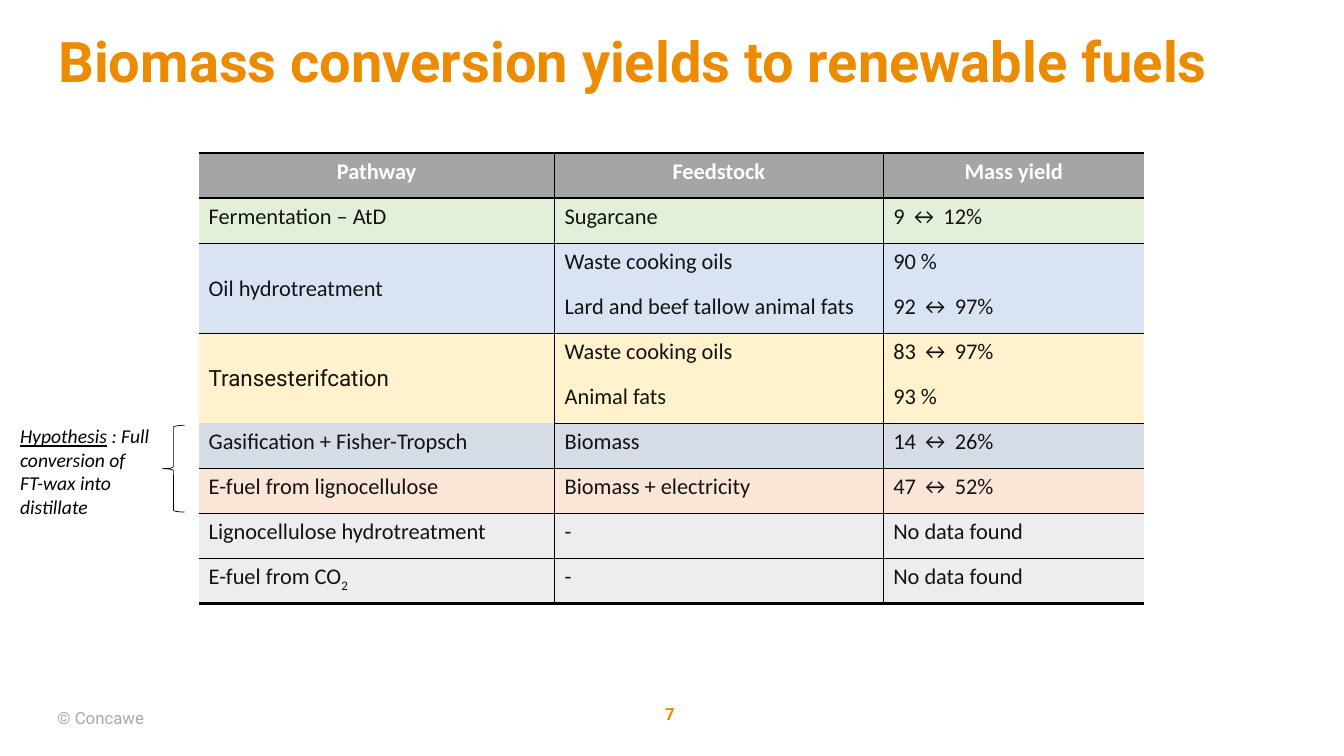
from lxml import etree
from pptx import Presentation
from pptx.dml.color import RGBColor
from pptx.enum.shapes import MSO_SHAPE as SHAPE
from pptx.enum.text import MSO_ANCHOR as ANCHOR, PP_ALIGN as ALIGN
from pptx.oxml.ns import qn
from pptx.util import Inches, Pt

TITLE = "Biomass conversion yields to renewable fuels"
COPYRIGHT = "© Concawe"
PAGE = "7"
HYPOTHESIS = ["Hypothesis", " : Full conversion of FT-wax into distillate"]
ORANGE, BLACK, INK = "ED8B00", "000000", "141313"

HEADER = ("Pathway", "Feedstock", "Mass yield")
# pathway, fill, (feedstock, mass yield) rows
PATHWAYS = [
    ("Fermentation – AtD", "E2F0D9", [("Sugarcane", "9 ↔ 12%")]),
    ("Oil hydrotreatment", "DAE3F3", [("Waste cooking oils", "90 %"),
                                      ("Lard and beef tallow animal fats", "92 ↔ 97%")]),
    ("Transesterifcation", "FFF2CC", [("Waste cooking oils", "83 ↔ 97%"),
                                      ("Animal fats", "93 %")]),
    ("Gasification + Fisher-Tropsch", "D6DCE5", [("Biomass", "14 ↔ 26%")]),
    ("E-fuel from lignocellulose", "FBE5D6", [("Biomass + electricity", "47 ↔ 52%")]),
    ("Lignocellulose hydrotreatment", "EDEDED", [("-", "No data found")]),
    ("E-fuel from CO", "EDEDED", [("-", "No data found")]),
]
COL_WIDTHS = (3.53, 3.26, 2.59)
UNRULED = ("Transesterifcation", "Gasification + Fisher-Tropsch")


def rgb(value):
    return RGBColor.from_string(value)


def style(font, size, color, name="Calibri", bold=False):
    font.size, font.name, font.bold = Pt(size), name, bold
    font.color.rgb = rgb(color)


def add_text(s, box, text, size, color, name, bold=False, anchor=ANCHOR.MIDDLE):
    tf = s.shapes.add_textbox(*map(Inches, box)).text_frame
    tf.word_wrap = True
    tf.vertical_anchor = anchor
    tf.margin_left = tf.margin_top = 0
    tf.margin_bottom = 0 if anchor == ANCHOR.MIDDLE else Inches(0.05)
    tf.text = text
    style(tf.paragraphs[0].runs[0].font, size, color, name, bold)
    return tf


def set_borders(cell, left, right, top, bottom):
    """Draw each side at its width in points; 0 means no line."""
    tcPr = cell._tc.get_or_add_tcPr()
    for side, width in zip("LRTB", (left, right, top, bottom)):
        ln = etree.SubElement(tcPr, qn(f"a:ln{side}"), w=str(Pt(width)))
        if width:
            fill = etree.SubElement(ln, qn("a:solidFill"))
            etree.SubElement(fill, qn("a:srgbClr"), val=BLACK)
        else:
            etree.SubElement(ln, qn("a:noFill"))


def fill_cell(table, row, col, text, fill, top, bottom, header=False):
    cell = table.cell(row, col)
    set_borders(cell, int(col > 0), int(col < 2), top, bottom)
    cell.fill.solid()
    cell.fill.fore_color.rgb = rgb(fill)
    cell.text = text
    p = cell.text_frame.paragraphs[0]
    p.alignment = ALIGN.CENTER if header else ALIGN.LEFT
    style(p.font, 16, INK)
    for r in p.runs:
        style(r.font, 16, "FFFFFF" if header else INK, bold=header)
    return cell


def add_yield_table(s):
    n_rows = 1 + sum(len(rows) for _, _, rows in PATHWAYS)
    table = s.shapes.add_table(n_rows, 3, Inches(1.97), Inches(1.52),
                               Inches(sum(COL_WIDTHS)), Inches(4.47)).table
    table.first_row = table.horz_banding = False
    for column, width in zip(table.columns, COL_WIDTHS):
        column.width = Inches(width)
    for col, text in enumerate(HEADER):
        fill_cell(table, 0, col, text, "A5A5A5", 2, 2, header=True)

    row = 1
    for pathway, fill, feedstocks in PATHWAYS:
        first, last = row, row + len(feedstocks) - 1
        for feedstock, mass_yield in feedstocks:
            top = 2 if row == 1 else int(row == first)
            bottom = 2 if row == n_rows - 1 else int(row == last)
            texts = (pathway if row == first else "", feedstock, mass_yield)
            for col, text in enumerate(texts):
                # the first column has no rule between the UNRULED pathways
                open_top = col == 0 and pathway == UNRULED[1]
                open_bottom = col == 0 and pathway == UNRULED[0]
                fill_cell(table, row, col, text, fill,
                          0 if open_top else top, 0 if open_bottom else bottom)
            row += 1
        if last > first:
            cell = table.cell(first, 0)
            cell.merge(table.cell(last, 0))
            cell.vertical_anchor = ANCHOR.MIDDLE
            if pathway == "Transesterifcation":
                cell.text_frame.paragraphs[0].runs[0].font.name = "Roboto"

    r = table.cell(n_rows - 1, 0).text_frame.paragraphs[0].add_run()
    r.text = "2"
    style(r.font, 16, INK)
    r.font._element.set("baseline", "-25000")


def add_hypothesis(s):
    tf = s.shapes.add_textbox(Inches(0.1), Inches(4.16), Inches(1.51), Inches(1.04)).text_frame
    tf.word_wrap = True
    for text in HYPOTHESIS:
        r = tf.paragraphs[0].add_run()
        r.text = text
        style(r.font, 14, BLACK)
        r.font.italic = True
        r.font.underline = text == HYPOTHESIS[0]
    brace = s.shapes.add_shape(SHAPE.LEFT_BRACE, Inches(1.61), Inches(4.22),
                               Inches(0.22), Inches(0.86))
    brace.shadow.inherit = False
    brace.fill.background()
    brace.line.color.rgb = rgb(BLACK)
    brace.line.width = Pt(0.5)


def main():
    prs = Presentation()
    prs.slide_width, prs.slide_height = Inches(13.33), Inches(7.5)
    s = prs.slides.add_slide(prs.slide_layouts[6])
    add_text(s, (0.57, 7, 1.17, 0.25), COPYRIGHT, 12, "A7A8AA", "Roboto")
    page = add_text(s, (6.43, 6.98, 0.53, 0.2), PAGE, 12, ORANGE, "Roboto", bold=True)
    page.paragraphs[0].alignment = ALIGN.CENTER
    add_text(s, (0.58, 0.26, 12.23, 0.78), TITLE, 40, ORANGE, "Roboto",
             bold=True, anchor=ANCHOR.TOP)
    add_yield_table(s)
    add_hypothesis(s)
    prs.save("out.pptx")


if __name__ == "__main__":
    main()
